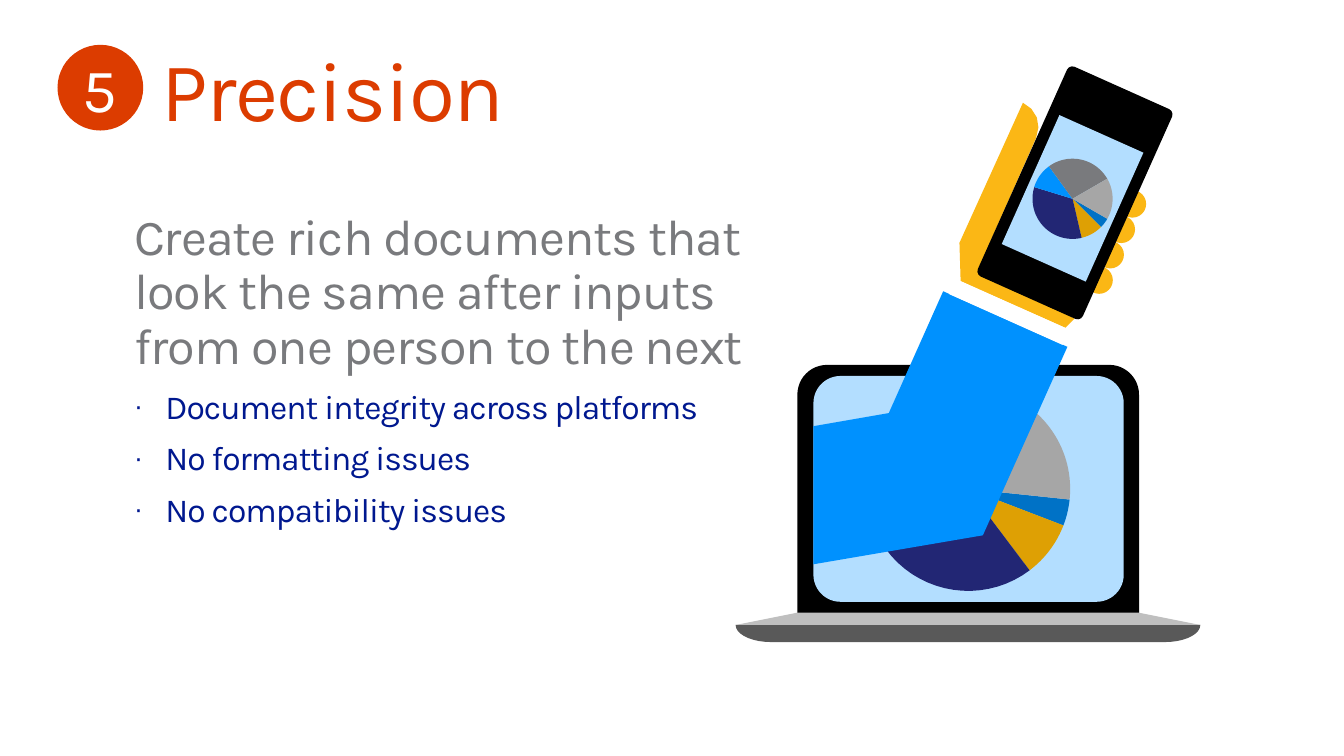
import math

import pptx
import pptx.dml.color
import pptx.enum.shapes
import pptx.enum.text
import pptx.oxml
import pptx.oxml.ns
import pptx.util

Cm = pptx.util.Cm
Pt = pptx.util.Pt
SHAPE = pptx.enum.shapes.MSO_SHAPE
FONT = "Karla"
ORANGE, BLUE, YELLOW, SKY = "DC3C00", "0091FE", "FBB715", "B3DEFF"
TILT = 24.1


def paint(fill, color):
    """Give a shape fill or a font fill one solid colour."""
    fill.solid()
    fill.fore_color.rgb = pptx.dml.color.RGBColor.from_string(color)


def add_flat(outline, color, center_x=0, center_y=0, width=0, height=0):
    """Add a freeform from a list of points (cm), or a preset shape around its centre."""
    if isinstance(outline, list):
        points = [(Cm(x), Cm(y)) for x, y in outline]
        builder = slide.shapes.build_freeform(*points[0], scale=1.0)
        builder.add_line_segments(points[1:], close=True)
        shape = builder.convert_to_shape()
    else:
        shape = slide.shapes.add_shape(
            outline, Cm(center_x - width / 2), Cm(center_y - height / 2), Cm(width), Cm(height))
    paint(shape.fill, color)
    shape.line.fill.background()
    shape.shadow.inherit = False
    return shape


presentation = pptx.Presentation()
presentation.slide_width = Cm(33.87)
presentation.slide_height = Cm(19.05)
slide = presentation.slides.add_slide(presentation.slide_layouts[5])

# Title and number
title = slide.shapes.title
title.left, title.top, title.width, title.height = Cm(4.06), Cm(1.24), Cm(27.08), Cm(2.08)
title.text_frame.text = "Precision"
title.text_frame.vertical_anchor = pptx.enum.text.MSO_ANCHOR.TOP

badge = add_flat(SHAPE.OVAL, ORANGE, 2.53, 2.21, 2.16, 2.16)
badge.text_frame.text = "5"
badge.text_frame.vertical_anchor = pptx.enum.text.MSO_ANCHOR.MIDDLE

# Headline and bullets
body = slide.shapes.add_textbox(Cm(3.38), Cm(5.34), Cm(18.06), Cm(6.96))
body.text_frame.text = "\n".join([
    "Create rich documents that\vlook the same after inputs\vfrom one person to the next",
    "Document integrity across platforms",
    "No formatting issues",
    "No compatibility issues",
])
headline, *bullets = body.text_frame.paragraphs
headline.space_after = Pt(6)
for paragraph in bullets:
    paragraph.space_before = Pt(4.8)
    paragraph.space_after = Pt(6)
    properties = paragraph._p.get_or_add_pPr()
    properties.set("marL", str(Cm(0.79)))
    properties.set("indent", str(Cm(-0.79)))
    for tag, name, value in (("buSzPct", "val", "80000"),
                             ("buFont", "typeface", "Arial"),
                             ("buChar", "char", "·")):
        bullet = pptx.oxml.parse_xml(f"<a:{tag} {pptx.oxml.ns.nsdecls('a')}/>")
        bullet.set(name, value)
        properties.append(bullet)

for shape in (title, badge, body):
    frame = shape.text_frame
    frame.word_wrap = True
    frame.auto_size = pptx.enum.text.MSO_AUTO_SIZE.NONE
    inset = Cm(0.13 if shape is badge else 0)
    frame.margin_left = frame.margin_right = frame.margin_top = frame.margin_bottom = inset

LEFT, CENTER = pptx.enum.text.PP_ALIGN.LEFT, pptx.enum.text.PP_ALIGN.CENTER
text_styles = [
    (title.text_frame.paragraphs, 60, ORANGE, LEFT, 0.9, -100),
    (badge.text_frame.paragraphs, 44, "FFFFFF", CENTER, 1.0, 0),
    ([headline], 36, "797A7D", LEFT, 0.9, -70),
    (bullets, 24, "00188F", LEFT, 0.9, -70),
]
for paragraphs, size, color, alignment, line_spacing, tracking in text_styles:
    for paragraph in paragraphs:
        paragraph.alignment = alignment
        paragraph.line_spacing = line_spacing
        paragraph.font.name = FONT
        paragraph.font.size = Pt(size)
        paint(paragraph.font.fill, color)
        for run in paragraph.runs:
            run._r.get_or_add_rPr().set("spc", str(tracking))

# Laptop
lid = add_flat(SHAPE.ROUND_2_SAME_RECTANGLE, "000000", 24.4, 12.32, 8.61, 6.25)
display = add_flat(SHAPE.ROUNDED_RECTANGLE, SKY, 24.41, 12.32, 7.82, 5.69)
lid.adjustments[0] = display.adjustments[0] = 0.12
corner = [(math.cos(math.radians(angle)), math.sin(math.radians(angle)))
          for angle in range(0, 91, 10)]
base_left = [(19.43 - 0.89 * x, 15.75 + 0.43 * y) for x, y in corner]
base_right = [(29.36 + 0.89 * x, 15.75 + 0.43 * y) for x, y in reversed(corner)]
add_flat(base_left + base_right, "595959")
add_flat([(20.09, 15.44), (18.54, 15.75), (30.25, 15.75), (28.7, 15.44)], "BFBFBF")

# Fingers and hand, with the phone in front
for finger in range(4):
    add_flat(SHAPE.OVAL, YELLOW, 28.54 - 0.28 * finger, 5.14 + 0.64 * finger, 0.69, 0.69)
hand = [(24.9, 6.8), (24.64, 6.81), (26.11, 3.48), (26.17, 3.21), (26.13, 2.96),
        (25.99, 2.74), (25.78, 2.59), (24.18, 6.12), (24.21, 7.09), (26.85, 8.26),
        (27.08, 8.03)]
add_flat(hand, YELLOW)
phone = add_flat(SHAPE.ROUNDED_RECTANGLE, "000000", 27.09, 4.86, 2.9, 5.79)
phone.adjustments[0] = 0.05
phone_screen = add_flat(SHAPE.RECTANGLE, SKY, 27.03, 5, 2.32, 3.56)
phone.rotation = phone_screen.rotation = TILT

# Pies: each slice starts at its angle, clockwise from the right, and ends at the next
pies = [
    (24.4, 12.32, 2.57, [(6, "0072C6"), (21, "DEA004"), (53, "222674"),
                         (174, "FCF4A1"), (210, "E3E584"), (306, "A6A6A6")]),
    (27.03, 5.01, 1.01, [(30, "0072C6"), (45, "DEA004"), (77, "222674"),
                         (197, BLUE), (234, "797A7D"), (330, "A6A6A6")]),
]
ARC_STEPS = 24
for center_x, center_y, radius, slices in pies:
    for index, (start, color) in enumerate(slices):
        sweep = (slices[(index + 1) % len(slices)][0] - start) % 360
        angles = [math.radians(start + sweep * step / ARC_STEPS) for step in range(ARC_STEPS + 1)]
        arc = [(center_x + radius * math.cos(angle), center_y + radius * math.sin(angle))
               for angle in angles]
        add_flat([(center_x, center_y)] + arc, color)

# Arm and cuff
arm = [(23.77, 7.34), (22.4, 10.41), (20.5, 10.74), (20.5, 14.22), (24.77, 13.49), (26.9, 8.74)]
add_flat(arm, BLUE)
cuff = add_flat(SHAPE.RECTANGLE, "FFFFFF", 25.43, 7.86, 3.14, 0.42)
cuff.rotation = TILT

presentation.save("out.pptx")
